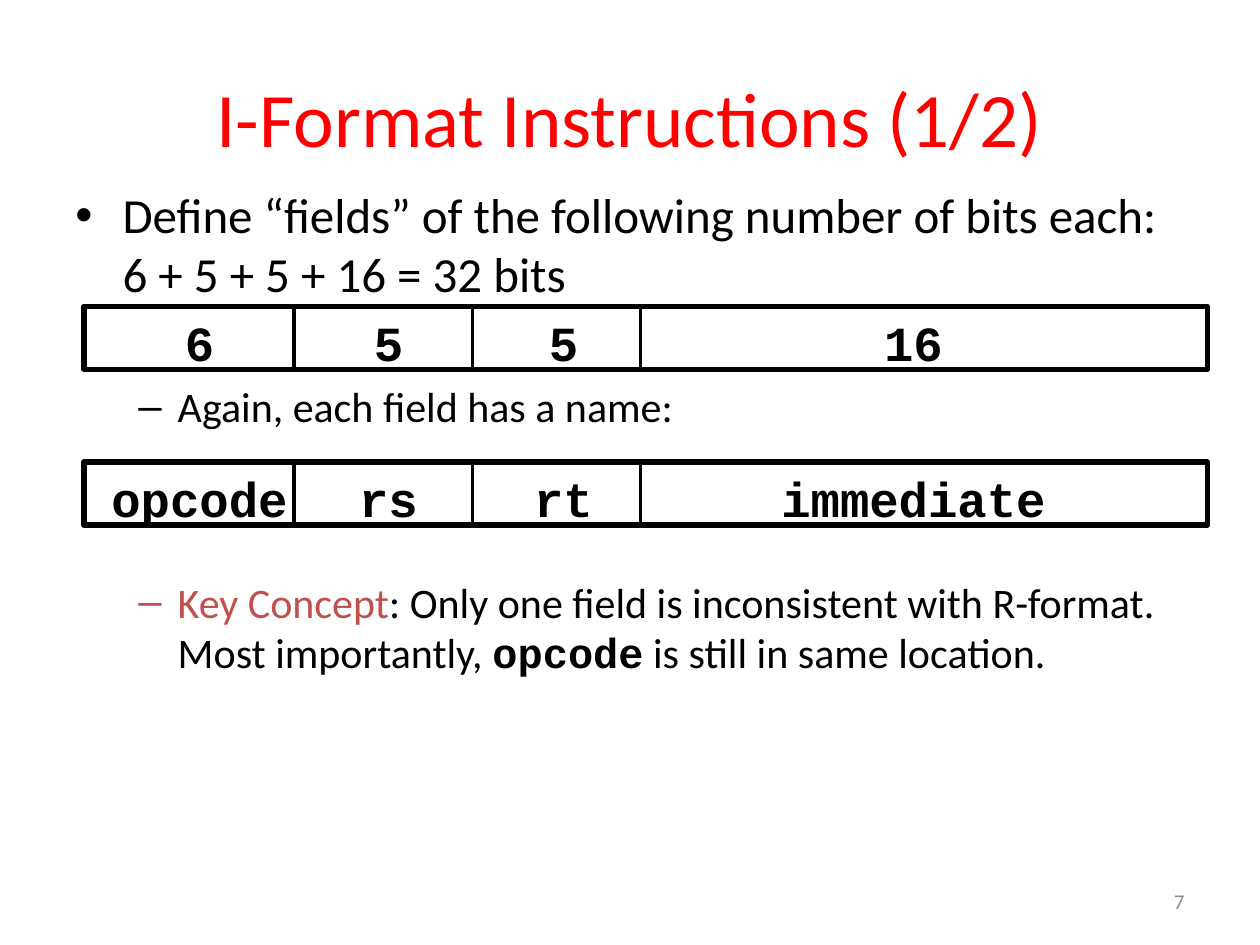
"""Build the slide on the bit fields of I-format instructions."""
import pptx
import pptx.dml.color
import pptx.enum.shapes
import pptx.enum.text
import pptx.oxml.ns
import pptx.util
from lxml import etree

Pt = pptx.util.Pt
ALIGN = pptx.enum.text.PP_ALIGN
ANCHOR = pptx.enum.text.MSO_ANCHOR
COLOURS = {"title": "FF0000", "ink": "000000", "accent": "C0504D", "number": "8C8C8C"}


def add_span(para, text, colour="ink", **style):
    """Append a run with its font settings."""
    span = para.add_run()
    span.text = text
    for name, value in {"name": "Calibri", "bold": False, **style}.items():
        setattr(span.font, name, value)
    span.font.color.rgb = pptx.dml.color.RGBColor.from_string(COLOURS[colour])


def add_box(left, top, width, height, **frame_style):
    """Add a text box and return its text frame."""
    frame = page.shapes.add_textbox(Pt(left), Pt(top), Pt(width), Pt(height)).text_frame
    for name, value in {"word_wrap": True, **frame_style}.items():
        setattr(frame, name, value)
    return frame


deck = pptx.Presentation()
deck.slide_width, deck.slide_height = Pt(720), Pt(540)
page = deck.slides.add_slide(deck.slide_layouts[5])

title = page.shapes.title
for name, value in {"left": 36, "top": 21.6, "width": 648, "height": 90}.items():
    setattr(title, name, Pt(value))
title.text_frame.vertical_anchor = ANCHOR.MIDDLE
heading = title.text_frame.paragraphs[0]
heading.alignment = ALIGN.CENTER
add_span(heading, "I-Format Instructions (1/2)", "title", size=Pt(44))

bullets = [
    {"mark": "•", "margin": 27, "hang": 27, "before": 0, "size": 28, "spans": [
        ("Define “fields” of the following number of bits each: 6 + 5 + 5 + 16 = 32 bits", {})]},
    {"mark": "–", "margin": 58.5, "hang": 22.5, "before": 44.5, "size": 24, "spans": [
        ("Again, each field has a name:", {})]},
    {"mark": "–", "margin": 58.5, "hang": 22.5, "before": 83, "size": 24, "spans": [
        ("Key Concept", {"colour": "accent"}),
        (": Only one field is inconsistent with R-format. Most importantly, ", {}),
        ("opcode", {"name": "Courier New", "bold": True}),
        (" is still in same location.", {})]},
]
body = add_box(36, 102.2, 642, 318)
for index, bullet in enumerate(bullets):
    para = body.add_paragraph() if index else body.paragraphs[0]
    para.level = 1 if bullet["mark"] == "–" else 0
    para.space_before = Pt(bullet["before"])
    properties = para._p.get_or_add_pPr()
    properties.set("marL", str(Pt(bullet["margin"])))
    properties.set("indent", str(-Pt(bullet["hang"])))
    font = etree.SubElement(properties, pptx.oxml.ns.qn("a:buFont"))
    font.set("typeface", "Arial")
    mark = etree.SubElement(properties, pptx.oxml.ns.qn("a:buChar"))
    mark.set("char", bullet["mark"])
    for text, style in bullet["spans"]:
        add_span(para, text, size=Pt(bullet["size"]), **style)

row_left, row_width, row_height = 48, 642, 36
dividers = [168, 270, 366]
label_centres = [114, 222, 322, 522]
rows = [(175, ["6", "5", "5", "16"]), (264, ["opcode", "rs", "rt", "immediate"])]
black = pptx.dml.color.RGBColor.from_string(COLOURS["ink"])
for top, labels in rows:
    for centre, label in zip(label_centres, labels):
        width = 14.4 + 16.8 * len(label)
        frame = add_box(centre - width / 2, top, width, 41, word_wrap=False,
                        auto_size=pptx.enum.text.MSO_AUTO_SIZE.SHAPE_TO_FIT_TEXT)
        frame.paragraphs[0].alignment = ALIGN.CENTER
        add_span(frame.paragraphs[0], label, name="Courier New", bold=True, size=Pt(28))
    outline = page.shapes.add_shape(pptx.enum.shapes.MSO_SHAPE.RECTANGLE,
                                    Pt(row_left), Pt(top), Pt(row_width), Pt(row_height))
    outline.shadow.inherit = False
    outline.fill.background()
    outline.line.color.rgb = black
    outline.line.width = Pt(3)
    for x in dividers:
        divider = page.shapes.add_connector(pptx.enum.shapes.MSO_CONNECTOR.STRAIGHT,
                                            Pt(x), Pt(top), Pt(x), Pt(top + row_height))
        divider.line.color.rgb = black
        divider.line.width = Pt(2.25)
        etree.SubElement(divider._element.spPr, pptx.oxml.ns.qn("a:effectLst"))

number = add_box(516, 500.5, 168, 28.75, vertical_anchor=ANCHOR.MIDDLE)
number.paragraphs[0].alignment = ALIGN.RIGHT
add_span(number.paragraphs[0], "7", "number", size=Pt(12))

deck.save("out.pptx")
